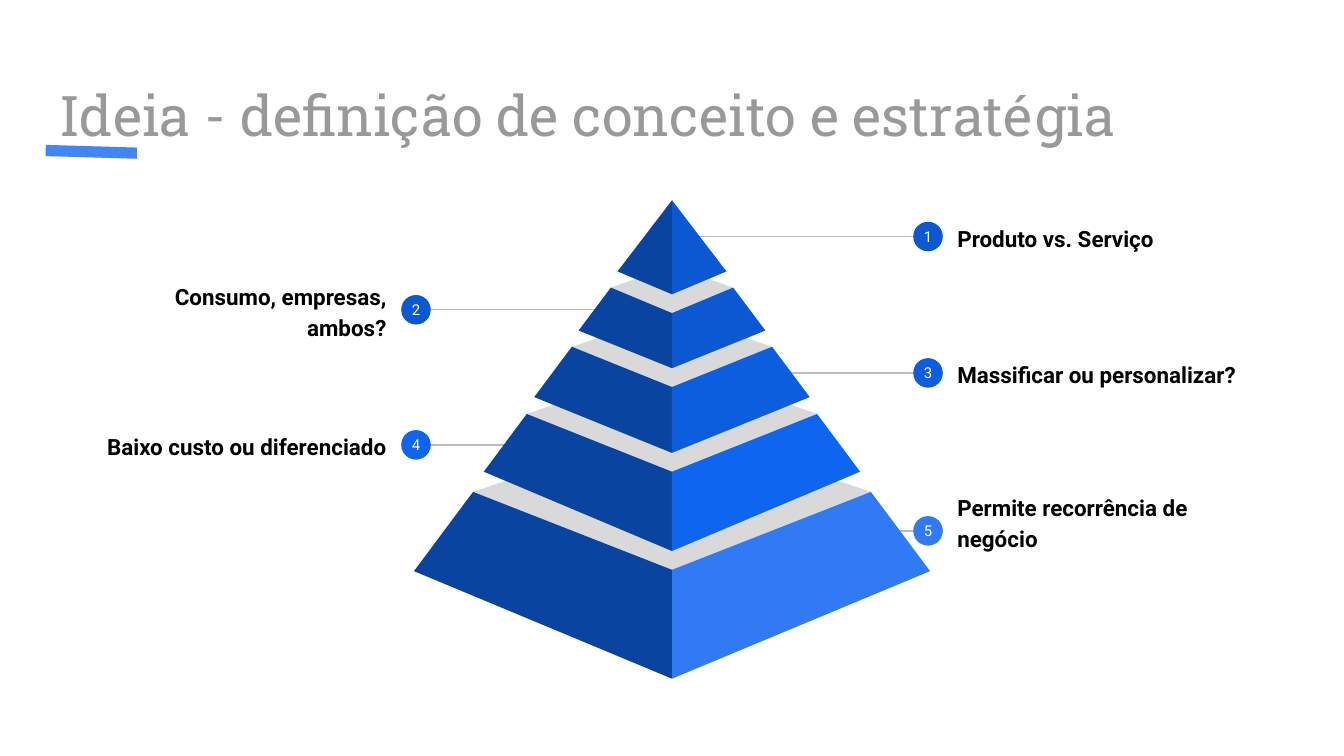
from pptx import Presentation
from pptx.dml.color import RGBColor
from pptx.enum.shapes import MSO_CONNECTOR, MSO_SHAPE
from pptx.enum.text import MSO_ANCHOR, MSO_AUTO_SIZE, PP_ALIGN
from pptx.oxml.ns import qn
from pptx.util import Inches, Pt
from lxml import etree

STRAIGHT = MSO_CONNECTOR.STRAIGHT
OVAL = MSO_SHAPE.OVAL
LEFT, CENTER, RIGHT = PP_ALIGN.LEFT, PP_ALIGN.CENTER, PP_ALIGN.RIGHT
TOP, MIDDLE = MSO_ANCHOR.TOP, MSO_ANCHOR.MIDDLE
NO_AUTOFIT = MSO_AUTO_SIZE.NONE
TITLE_ONLY = 5

COLORS = {
    "title": "999999", "accent": "4285F4", "leader": "BDBDBD",
    "text": "000000", "white": "FFFFFF", "lid": "D9D9D9", "shade": "0944A1",
    "top": "0C58D3", "middle": "0D5DDF", "lower": "0E65F0", "base": "307BF3",
}

# The grid has square cells, 100 columns across the slide.
COLUMNS, ROWS = 100, 56.25
CELL = Inches(10) / COLUMNS
AXIS = 50
BADGE = 2.2
BADGE_OFFSET = 19.05
LABEL_WIDTH, LABEL_HEIGHT = 23.3, 8.2

# Tiers from base to top: lid back row, then half width, side row and
# front row of the upper edge, the same of the lower edge, and lit colour.
TIERS = [
    (31.6, (14.8, 36.6, 42.4), (19.2, 42.5, 50.5), "base"),
    (27.1, (10.8, 30.8, 35.1), (14.0, 35.1, 41.0), "lower"),
    (23.3, (7.45, 25.8, 28.8), (10.25, 29.55, 33.7), "middle"),
    (19.8, (4.55, 21.4, 23.3), (6.95, 24.6, 27.4), "top"),
    (None, (0, 14.9, 14.9), (4.05, 20.2, 21.9), "top"),
]

# Number, label, side (1 right, -1 left), row, leader start, colour, extra
# space under the label.
CALLOUTS = [
    (1, "Produto vs. Serviço", 1, 17.6, 51.7, "top", 0),
    (2, "Consumo, empresas, ambos?", -1, 23.05, 44.5, "top", 0),
    (3, "Massificar ou personalizar?", 1, 27.75, 57.6, "middle", 0),
    (4, "Baixo custo ou diferenciado", -1, 33.1, 39.6, "lower", 0),
    (5, "Permite recorrência de negócio", 1, 39.5, 63.2, "base", 1.5),
]


def cells(count):
    return round(count * CELL)


def rgb(name):
    return RGBColor.from_string(COLORS[name])


class Deck:
    """Holds the style and the current slide."""

    def __init__(self):
        self.prs = Presentation()
        self.prs.slide_width = cells(COLUMNS)
        self.prs.slide_height = cells(ROWS)
        self.slide = self.prs.slides.add_slide(
            self.prs.slide_layouts[TITLE_ONLY])
        self.shapes = self.slide.shapes

    def set_text(self, shape, text, size, color, align, anchor,
                 font="Roboto", bold=False, insets=(1, 1, 1, 1)):
        frame = shape.text_frame
        frame.text = text
        frame.word_wrap = True
        frame.auto_size = NO_AUTOFIT
        frame.vertical_anchor = anchor
        (frame.margin_left, frame.margin_top,
         frame.margin_right, frame.margin_bottom) = map(cells, insets)
        paragraph = frame.paragraphs[0]
        paragraph.alignment = align
        paragraph.font.name = font
        paragraph.font.size = Pt(size)
        paragraph.font.bold = bold
        paragraph.font.color.rgb = rgb(color)
        return paragraph

    def title(self, text):
        title = self.shapes.title
        title.left, title.top, title.width, title.height = map(
            cells, (3.4, 5, 93.2, 6.3))
        self.set_text(title, text, 30, "title", LEFT, TOP, "Roboto Slab")

    def line(self, start, end, color, width):
        line = self.shapes.add_connector(
            STRAIGHT, *map(cells, (*start, *end)))
        line.line.color.rgb = rgb(color)
        line.line.width = Pt(width)
        etree.SubElement(line._element.spPr, qn("a:effectLst"))

    def paint(self, shape, color):
        shape.shadow.inherit = False
        shape.fill.solid()
        shape.fill.fore_color.rgb = rgb(color)
        shape.line.fill.background()

    def polygon(self, points, color):
        start, *rest = [(cells(x), cells(y)) for x, y in points]
        builder = self.shapes.build_freeform(*start)
        builder.add_line_segments(rest, close=True)
        self.paint(builder.convert_to_shape(), color)

    def badge(self, number, x, y, color):
        badge = self.shapes.add_shape(OVAL, *map(
            cells, (x - BADGE / 2, y - BADGE / 2, BADGE, BADGE)))
        self.paint(badge, color)
        self.set_text(badge, str(number), 8, "white", CENTER, MIDDLE,
                      insets=(0, 0, 0, 0))

    def label(self, text, x, y, align, space_below):
        label = self.shapes.add_textbox(*map(
            cells, (x, y - LABEL_HEIGHT / 2, LABEL_WIDTH, LABEL_HEIGHT)))
        paragraph = self.set_text(
            label, text, 12, "text", align, MIDDLE, bold=True,
            insets=(1, 1, 1, 1 + space_below))
        paragraph.line_spacing = 1.15

    def callout(self, number, text, side, row, start, color, space_below):
        center = AXIS + side * BADGE_OFFSET
        edge = center + side * 1.2
        self.line((start, row), (center, row), "leader", 0.75)
        self.badge(number, center, row, color)
        if side > 0:
            self.label(text, edge, row, LEFT, space_below)
        else:
            self.label(text, edge - LABEL_WIDTH, row, RIGHT, space_below)

    def tier(self, back, upper, lower, color):
        """Draws the lid, if any, then the shaded and the lit face."""
        half, side_row, front = upper
        low_half, low_side, low_front = lower
        if back is not None:
            self.polygon([(AXIS - half, side_row), (AXIS, front),
                          (AXIS + half, side_row), (AXIS, back)], "lid")
        for side, face in ((-1, "shade"), (1, color)):
            edge = [(AXIS + side * half, side_row)] if half else []
            self.polygon(edge + [(AXIS, front), (AXIS, low_front),
                                 (AXIS + side * low_half, low_side)], face)


def main():
    deck = Deck()
    deck.title("Ideia - definição de conceito e estratégia")
    deck.line((3.4, 11.2), (10.2, 11.4), "accent", 6)
    for callout in CALLOUTS:
        deck.callout(*callout)
    for tier in TIERS:
        deck.tier(*tier)
    deck.prs.save("out.pptx")


if __name__ == "__main__":
    main()
